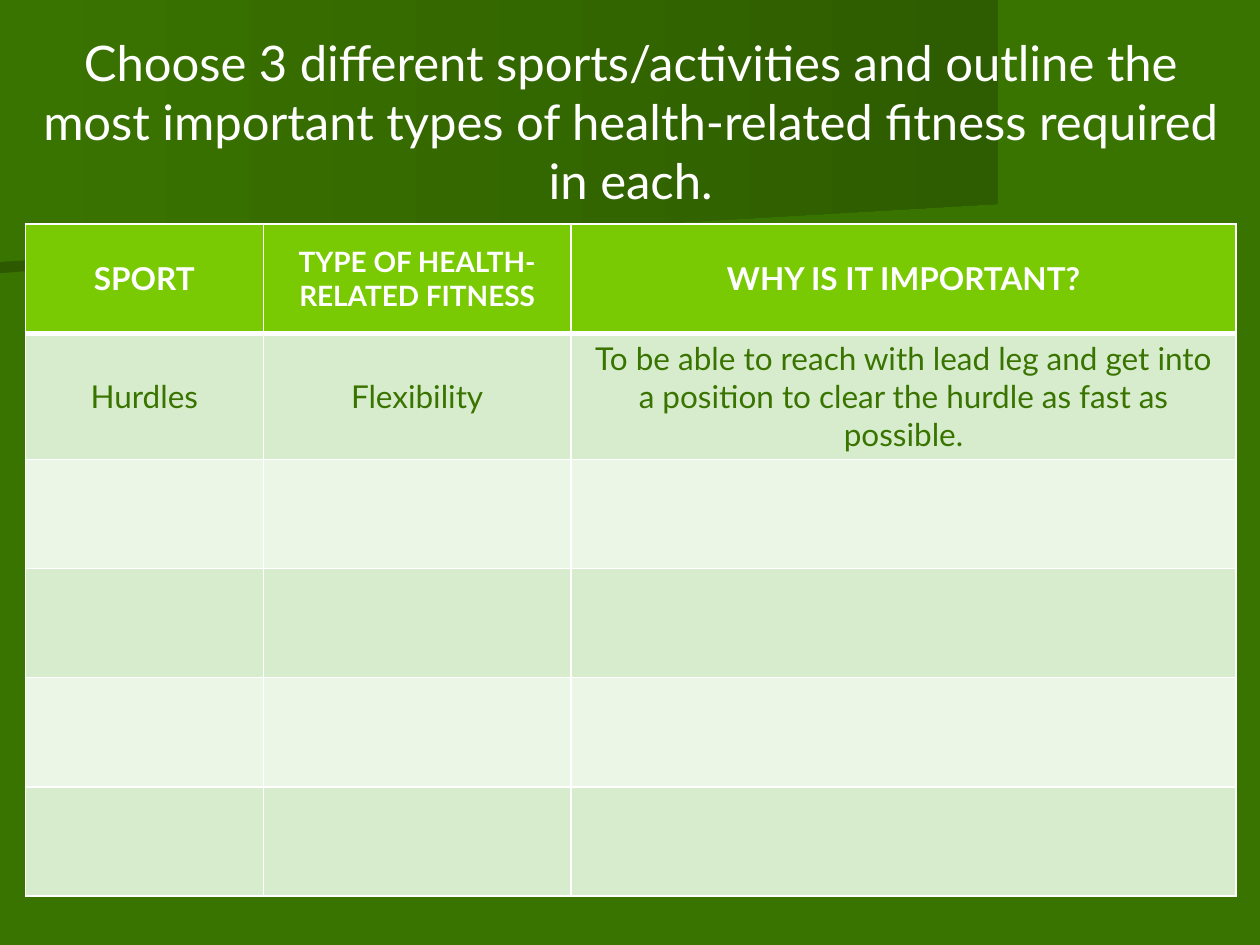
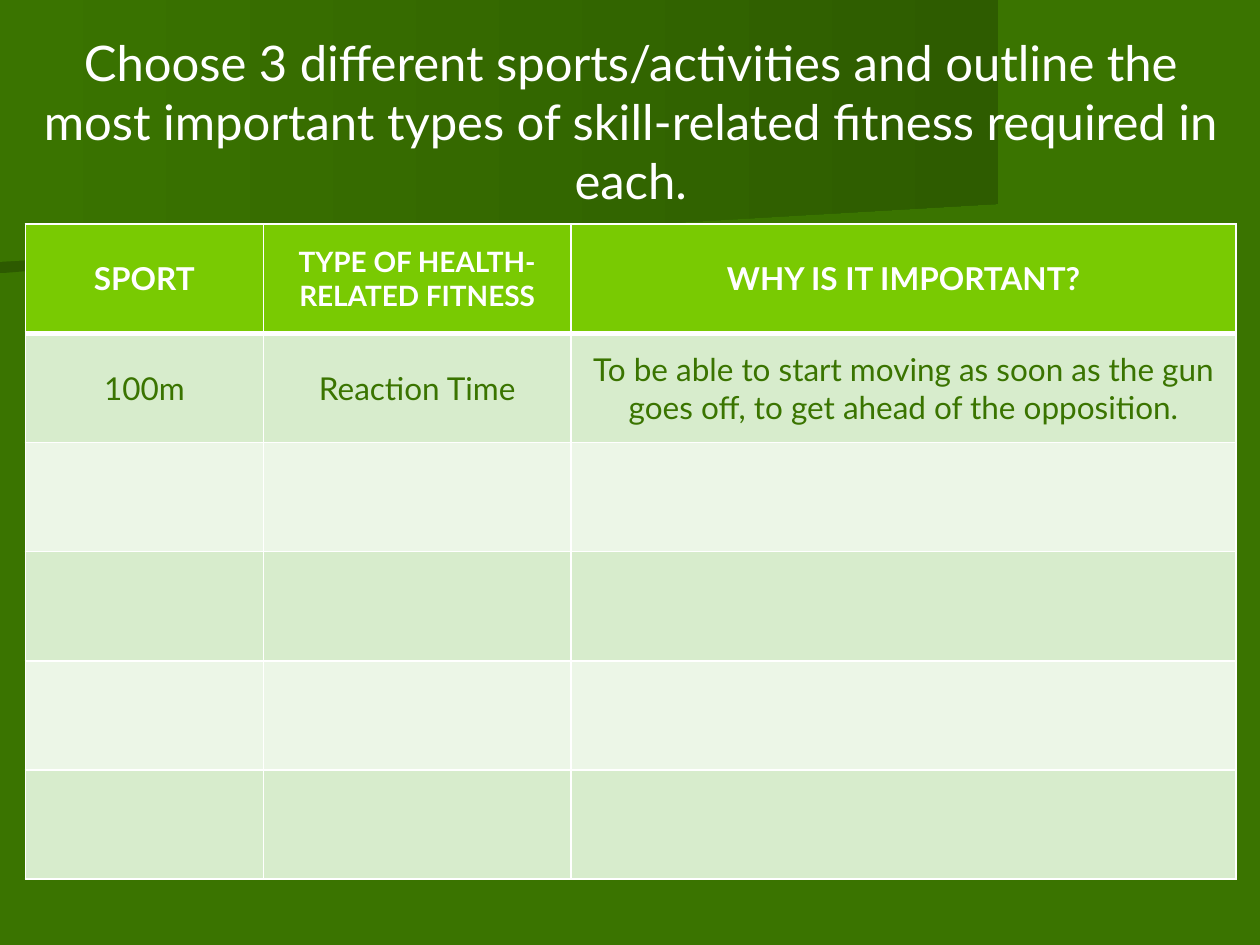
import pptx
import pptx.util
import pptx.dml.color
import pptx.enum.text
import pptx.oxml
import pptx.oxml.ns

Cm = pptx.util.Cm
Pt = pptx.util.Pt

FONT = "Lato"
DARK_GREEN, WHITE = "3A7400", "FFFFFF"
HEADER_GREEN = "79CA02"
STRIPES = ["D7ECCC", "ECF6E7"]

HEADINGS = [("SPORT", 18), ("TYPE OF HEALTH-RELATED FITNESS", 16), ("WHY IS IT IMPORTANT?", 18)]
TASKS = [
    {
        "title": "Choose 3 different sports/activities and outline the most important "
                 "types of health-related fitness required in each.",
        "example": ["Hurdles", "Flexibility",
                    "To be able to reach with lead leg and get into a position "
                    "to clear the hurdle as fast as possible."],
    },
    {
        "title": "Choose 3 different sports/activities and outline the most important "
                 "types of skill-related fitness required in each.",
        "example": ["100m", "Reaction Time",
                    "To be able to start moving as soon as the gun goes off, "
                    "to get ahead of the opposition."],
    },
]
EMPTY_ROWS = 4

BANDS = [
    ([(19.76, 3.89), (0, 5.51), (0, 2.57), (19.79, 2.57), (19.76, 3.25)], ["2D5A00", "2E5C00"]),
    ([(20.12, 4.11), (0, 5.28), (0, 0), (20.12, 0)], [DARK_GREEN, "2E5C00"]),
]
LEFT, WIDTH = 0.51, 24.41
TITLE_TOP, TITLE_HEIGHT = 0.53, 3
TABLE_TOP, ROW_HEIGHT = 4.52, 2.2
COLUMN_WIDTHS = [4.8, 6.2, 13.41]


def color(value):
    return pptx.dml.color.RGBColor.from_string(value)


def write(frame, text, size=18, ink=WHITE, bold=False):
    paragraph = frame.paragraphs[0]
    paragraph.alignment = pptx.enum.text.PP_ALIGN.CENTER
    paragraph.font.size = Pt(size)
    if text:
        run = paragraph.add_run()
        run.text = text
        run.font.name = FONT
        run.font.size = Pt(size)
        run.font.bold = bold
        run.font.color.rgb = color(ink)


def add_bands(slide):
    for corners, shades in BANDS:
        points = [(Cm(x), Cm(y)) for x, y in corners]
        builder = slide.shapes.build_freeform(*points[0])
        builder.add_line_segments(points[1:], close=True)
        band = builder.convert_to_shape()
        band.shadow.inherit = False
        band.line.fill.background()
        band.fill.gradient()
        band.fill.gradient_angle = 0
        for stop, position, shade in zip(band.fill.gradient_stops, (0, 1), shades):
            stop.position = position
            stop.color.rgb = color(shade)


def add_title(slide, title):
    box = slide.shapes.add_textbox(Cm(LEFT), Cm(TITLE_TOP), Cm(WIDTH), Cm(TITLE_HEIGHT))
    box.text_frame.word_wrap = True
    write(box.text_frame, title, size=28)


def style_cell(cell, fill, **widths):
    properties = cell._tc.get_or_add_tcPr()
    for side in "LRTB":
        properties.append(pptx.oxml.parse_xml(
            f'<a:ln{side} {pptx.oxml.ns.nsdecls("a")} w="{Pt(widths.get(side, 1))}">'
            f'<a:solidFill><a:srgbClr val="{WHITE}"/></a:solidFill></a:ln{side}>'))
    cell.fill.solid()
    cell.fill.fore_color.rgb = color(fill)
    cell.vertical_anchor = pptx.enum.text.MSO_ANCHOR.MIDDLE


def add_answer_table(slide, example):
    answers = [example] + [[""] * len(HEADINGS)] * EMPTY_ROWS
    row_count = len(answers) + 1
    table = slide.shapes.add_table(row_count, len(HEADINGS), Cm(LEFT), Cm(TABLE_TOP),
                                   Cm(WIDTH), Cm(ROW_HEIGHT * row_count)).table
    table.first_row = table.horz_banding = False
    for column, width in zip(table.columns, COLUMN_WIDTHS):
        column.width = Cm(width)
    for c, (heading, size) in enumerate(HEADINGS):
        cell = table.cell(0, c)
        style_cell(cell, HEADER_GREEN, B=3)
        write(cell.text_frame, heading, size=size, bold=True)
    for r, answer in enumerate(answers):
        for c, text in enumerate(answer):
            cell = table.cell(r + 1, c)
            style_cell(cell, STRIPES[r % 2], T=1 if r else 3)
            write(cell.text_frame, text, ink=DARK_GREEN)


def main():
    deck = pptx.Presentation()
    deck.slide_width, deck.slide_height = Cm(25.4), Cm(19.05)
    for task in TASKS:
        slide = deck.slides.add_slide(deck.slide_layouts[6])
        slide.background.fill.solid()
        slide.background.fill.fore_color.rgb = color(DARK_GREEN)
        add_bands(slide)
        add_answer_table(slide, task["example"])
        add_title(slide, task["title"])
    deck.save("out.pptx")


if __name__ == "__main__":
    main()
